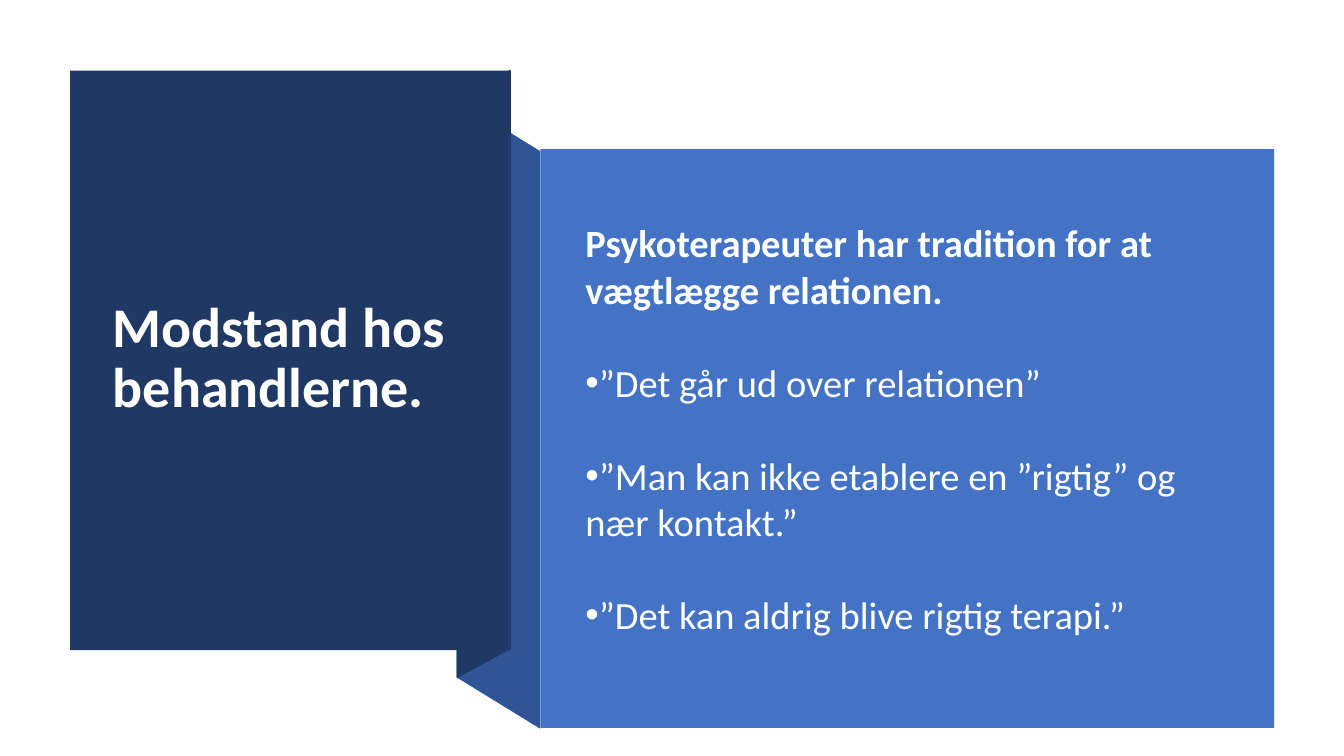
from dataclasses import dataclass

from lxml import etree
from pptx import Presentation
from pptx.dml.color import RGBColor
from pptx.enum.shapes import MSO_SHAPE
from pptx.enum.text import MSO_ANCHOR, MSO_AUTO_SIZE, PP_ALIGN
from pptx.oxml.ns import qn
from pptx.util import Pt

RECT = MSO_SHAPE.RECTANGLE
MIDDLE = MSO_ANCHOR.MIDDLE
NO_FIT = MSO_AUTO_SIZE.NONE
LEFT = PP_ALIGN.LEFT
FONT = "Calibri"
TITLE_ONLY = 5

COLORS = {
    "navy": "203864",
    "fold": "2F5597",
    "blue": "4472C4",
    "white": "FFFFFF",
    "text": "FEFFFF",
}


@dataclass
class Box:
    left: float
    top: float
    width: float
    height: float


@dataclass
class Panel:
    box: Box
    color: str


@dataclass
class Fold:
    left: float
    right: float
    left_top: float
    right_top: float
    height: float
    color: str


@dataclass
class Line:
    text: str
    bold: bool = False
    bullet: bool = False


FOLDS = [
    Fold(326.2, 385.9, 71.3, 108, 412.6, "fold"),
    Fold(326.2, 364.6, 70.6, 49.7, 414, "navy"),
]
FRONT = Panel(Box(50, 50.4, 315, 414), "navy")
BACK = Panel(Box(385.9, 106.6, 524.2, 413.3), "blue")
TITLE_BOX = Box(73.4, 77, 267.1, 359.3)
BODY_BOX = Box(411.1, 135.4, 468.7, 341.3)

TITLE = "Modstand hos behandlerne."
LINES = [
    Line("Psykoterapeuter har tradition for at vægtlægge relationen.", bold=True),
    Line("”Det går ud over relationen”", bullet=True),
    Line("”Man kan ikke etablere en ”rigtig” og nær kontakt.”", bullet=True),
    Line("”Det kan aldrig blive rigtig terapi.”", bullet=True),
]


def paint(shape, color: str) -> None:
    shape.shadow.inherit = False
    shape.fill.solid()
    shape.fill.fore_color.rgb = RGBColor.from_string(COLORS[color])
    shape.line.fill.background()


def place(shape, box: Box) -> None:
    shape.left, shape.top = Pt(box.left), Pt(box.top)
    shape.width, shape.height = Pt(box.width), Pt(box.height)


def style(font, size: float, color: str, bold: bool) -> None:
    font.name = FONT
    font.size = Pt(size)
    font.bold = bold
    font.color.rgb = RGBColor.from_string(COLORS[color])


def set_frame(frame) -> None:
    frame.word_wrap = True
    frame.auto_size = NO_FIT
    frame.vertical_anchor = MIDDLE


def add_panel(slide, panel: Panel) -> None:
    shape = slide.shapes.add_shape(RECT, 0, 0, 0, 0)
    place(shape, panel.box)
    paint(shape, panel.color)


def add_fold(slide, fold: Fold) -> None:
    start = Pt(fold.right), Pt(fold.right_top + fold.height)
    rest = [
        (fold.left, fold.left_top + fold.height),
        (fold.left, fold.left_top),
        (fold.right, fold.right_top),
    ]
    form = slide.shapes.build_freeform(*start)
    form.add_line_segments([(Pt(x), Pt(y)) for x, y in rest], close=True)
    paint(form.convert_to_shape(), fold.color)


def add_bullet(para) -> None:
    props = para._p.get_or_add_pPr()
    props.set("marL", "0")
    props.set("indent", "0")
    etree.SubElement(props, qn("a:buFont")).set("typeface", "Arial")
    etree.SubElement(props, qn("a:buChar")).set("char", "•")


def add_title(slide) -> None:
    title = slide.shapes.title
    place(title, TITLE_BOX)
    frame = title.text_frame
    set_frame(frame)
    frame.text = TITLE
    para = frame.paragraphs[0]
    para.alignment = LEFT
    para.line_spacing = 0.9
    style(para.runs[0].font, 40, "white", True)
    # Bring the title in front of its panel
    slide.shapes._spTree.append(title._element)


def add_body(slide) -> None:
    frame = slide.shapes.add_textbox(0, 0, 0, 0)
    place(frame, BODY_BOX)
    frame = frame.text_frame
    set_frame(frame)
    for i, line in enumerate(LINES):
        para = frame.add_paragraph() if i else frame.paragraphs[0]
        para.text = line.text
        para.alignment = LEFT
        para.line_spacing = 1.0
        if i:
            para.space_before = Pt(33.6)
        if line.bullet:
            add_bullet(para)
        style(para.runs[0].font, 27.5, "text", line.bold)


def main() -> None:
    deck = Presentation()
    deck.slide_width, deck.slide_height = Pt(960), Pt(540)
    slide = deck.slides.add_slide(deck.slide_layouts[TITLE_ONLY])

    # Folded ribbon behind the title panel
    for fold in FOLDS:
        add_fold(slide, fold)

    # Title panel
    add_panel(slide, FRONT)
    add_title(slide)

    # Text panel
    add_panel(slide, BACK)
    add_body(slide)

    deck.save("out.pptx")


if __name__ == "__main__":
    main()
